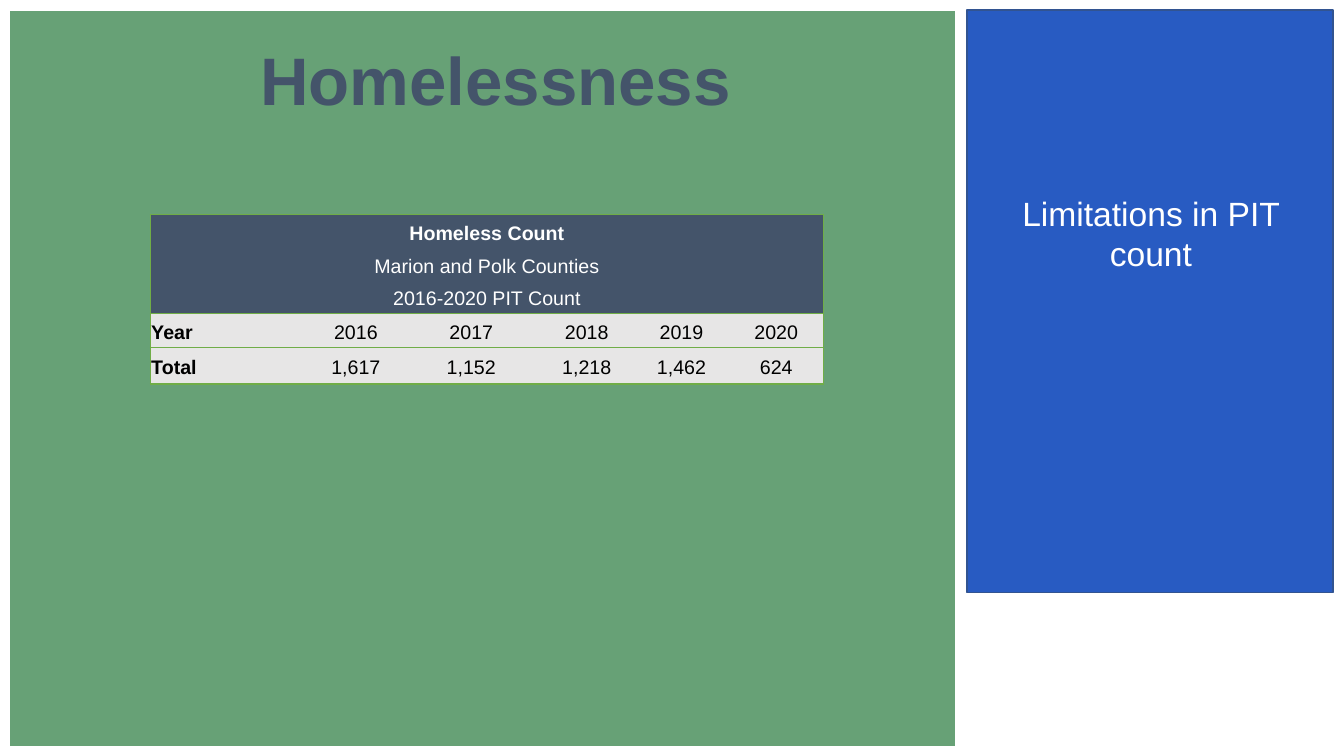
from dataclasses import dataclass

from lxml import etree
from pptx import Presentation
from pptx import util as u
from pptx.dml.color import RGBColor
from pptx.enum import shapes, text
from pptx.oxml import ns

PX = 9144


@dataclass(frozen=True)
class Theme:
    font: str = "Arial"
    green: str = "67A176"
    blue: str = "285BC2"
    edge: str = "325491"
    slate: str = "44546A"
    grey: str = "E7E6E6"
    rule: str = "70AD47"
    white: str = "FFFFFF"
    black: str = "000000"
    head: int = 48
    note: int = 24
    cell: int = 14


T = Theme()
HEADS = ["Homeless Count", "Marion and Polk Counties", "2016-2020 PIT Count"]
COUNTS = [
    ["Year", "2016", "2017", "2018", "2019", "2020"],
    ["Total", "1,617", "1,152", "1,218", "1,462", "624"],
]
WIDTHS = [157, 94, 135, 94, 94, 94]
HEIGHTS = [33, 32, 33, 34, 36]
PLAIN = "{2D5ABB26-0587-4C30-8999-92F81FD0307C}"


def px(*nums):
    return [u.Emu(n * PX) for n in nums]


def rgb(code):
    return RGBColor.from_string(code)


def write(frame, words, size, color, bold=False, align="CENTER", space=None):
    para = frame.paragraphs[0]
    para.alignment = getattr(text.PP_ALIGN, align)
    para.line_spacing = space
    run = para.add_run()
    run.text = words
    font = run.font
    font.name, font.size, font.bold = T.font, u.Pt(size), bold
    font.color.rgb = rgb(color)


def panel(slide, box, fill, line):
    rect = slide.shapes.add_shape(shapes.MSO_SHAPE.RECTANGLE, *px(*box))
    rect.shadow.inherit = False
    rect.fill.solid()
    rect.fill.fore_color.rgb = rgb(fill)
    rect.line.color.rgb = rgb(line)
    rect.line.width = u.Pt(1)


def border(cell, sides):
    props = cell._tc.get_or_add_tcPr()
    for side in "LRTB":
        line = etree.SubElement(props, ns.qn(f"a:ln{side}"), w=str(u.Pt(1)))
        if side in sides:
            fill = etree.SubElement(line, ns.qn("a:solidFill"))
            etree.SubElement(fill, ns.qn("a:srgbClr"), val=T.rule)
        else:
            etree.SubElement(line, ns.qn("a:noFill"))


def counts(slide, x, y):
    rows = [[head] + [""] * (len(WIDTHS) - 1) for head in HEADS] + COUNTS
    box = px(x, y, sum(WIDTHS), sum(HEIGHTS))
    table = slide.shapes.add_table(len(rows), len(WIDTHS), *box).table
    table._tbl.tblPr.find(ns.qn("a:tableStyleId")).text = PLAIN
    for col, width in zip(table.columns, px(*WIDTHS)):
        col.width = width
    for row, height in zip(table.rows, px(*HEIGHTS)):
        row.height = height
    last = len(WIDTHS) - 1
    for r, row in enumerate(rows):
        top = r < len(HEADS)
        if top:
            table.cell(r, 0).merge(table.cell(r, last))
        for c, words in enumerate(row):
            cell = table.cell(r, c)
            sides = "L" * (c == 0) + "R" * (c == last or top)
            sides += "T" * (r == 0 or not top)
            sides += "B" * (r >= len(HEADS) - 1)
            border(cell, sides)
            cell.fill.solid()
            cell.fill.fore_color.rgb = rgb(T.slate if top else T.grey)
            cell.vertical_anchor = text.MSO_ANCHOR.MIDDLE
            cell.margin_left = cell.margin_right = cell.margin_top = PX
            cell.margin_bottom = 0
            if words:
                write(cell.text_frame, words, T.cell,
                      T.white if top else T.black,
                      bold=r == 0 or (not top and c == 0),
                      align="CENTER" if top or c else "LEFT", space=1.15)


def main_part(slide, x, y, w, h):
    panel(slide, (x, y, w, h), T.green, T.white)
    title = slide.shapes.title
    title.left, title.top, title.width, title.height = px(x + 19, y + 23, 927, 90)
    frame = title.text_frame
    frame.auto_size = text.MSO_AUTO_SIZE.NONE
    frame.vertical_anchor = text.MSO_ANCHOR.MIDDLE
    write(frame, "Homelessness", T.head, T.slate, bold=True)
    title._element.getparent().append(title._element)
    counts(slide, x + 140, y + 203)


def side_part(slide, x, y, w, h):
    panel(slide, (x, y, w, h), T.blue, T.edge)
    note = slide.shapes.add_textbox(*px(x + 6, y + 176, w - 10, 91))
    note.text_frame.word_wrap = True
    write(note.text_frame, "Limitations in PIT count", T.note, T.white)


def main():
    deck = Presentation()
    deck.slide_width, deck.slide_height = px(1333, 750)
    slide = deck.slides.add_slide(deck.slide_layouts[5])
    main_part(slide, 9, 10, 939, 731)
    side_part(slide, 959, 10, 363, 578)
    deck.save("out.pptx")


if __name__ == "__main__":
    main()
